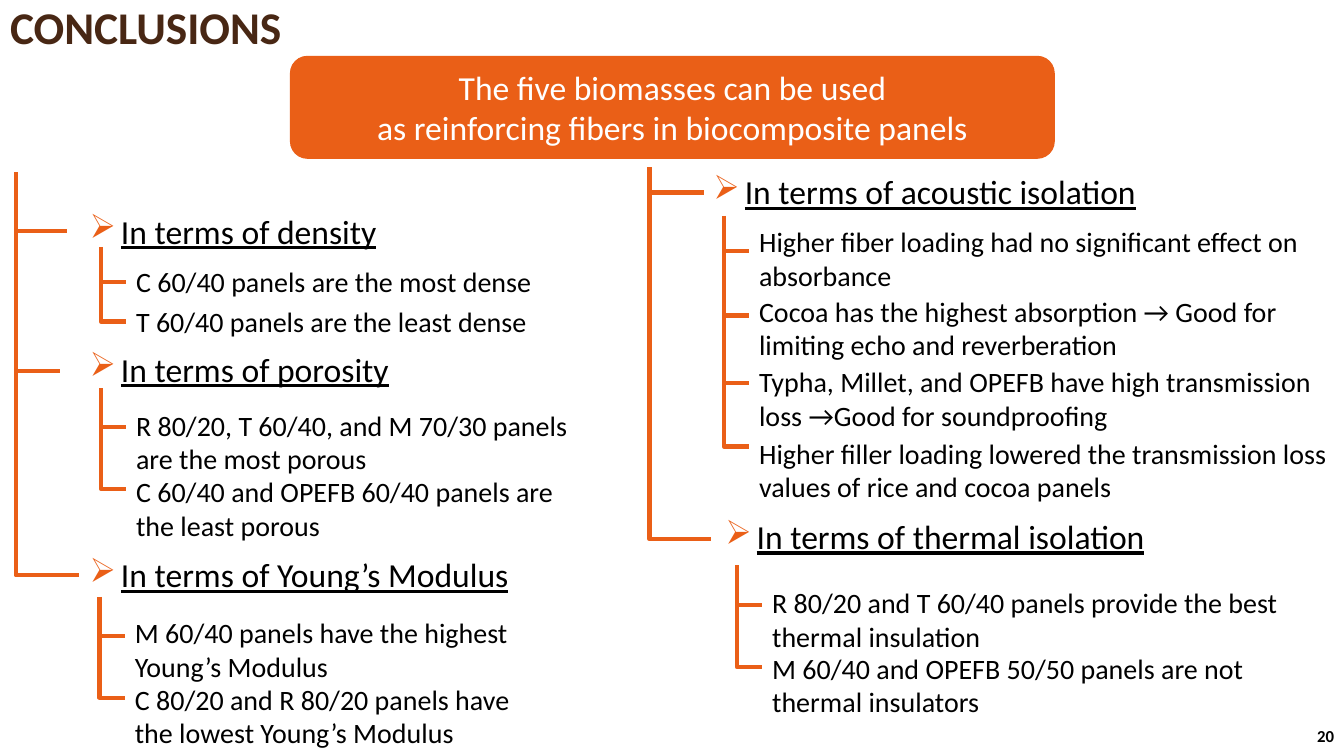
import pptx
import pptx.util
import pptx.dml.color
import pptx.enum.shapes
import pptx.enum.text
import pptx.oxml.ns
import lxml.etree

Cm, Pt = pptx.util.Cm, pptx.util.Pt
Align, Anchor = pptx.enum.text.PP_ALIGN, pptx.enum.text.MSO_ANCHOR
qn = pptx.oxml.ns.qn

ORANGE, BROWN, BLACK, WHITE = "EA5F17", "482714", "000000", "FFFFFF"
TITLE = "CONCLUSIONS"
CLAIM = ["The five biomasses can be used", "as reinforcing fibers in biocomposite panels"]
PAGE = "20"

TRUNKS = [
    dict(x=0.4, top=4.34, topics=[
        dict(name="In terms of density", box=(2.01, 5.18, 7.82), arm=(1.7, 5.82),
             stem=(2.54, 6.22), wide=11.53, facts=[
                 ("C 60/40 panels are the most dense", 6.55, 7.11),
                 ("T 60/40 panels are the least dense", 7.54, 8.1)]),
        dict(name="In terms of porosity", box=(2.01, 8.66, 8.13), arm=(1.52, 9.35),
             stem=(2.54, 9.78), wide=11.73, facts=[
                 ("R 80/20, T 60/40, and M 70/30 panels are the most porous", 10.16, 10.77),
                 ("C 60/40 and OPEFB 60/40 panels are the least porous", 11.84, 12.32)]),
        dict(name="In terms of Young’s Modulus", box=(2.01, 13.84, 11.18), arm=(1.98, 14.5),
             stem=(2.51, 15.04), wide=10.59, facts=[
                 ("M 60/40 panels have the highest Young’s Modulus", 15.39, 16.03),
                 ("C 80/20 and R 80/20 panels have the lowest Young’s Modulus", 17.07, 17.58)]),
    ]),
    dict(x=16.37, top=4.22, topics=[
        dict(name="In terms of acoustic isolation", box=(17.73, 4.19, 11.25), arm=(17.73, 4.85),
             stem=(18.24, 5.44), wide=14.99, facts=[
                 ("Higher fiber loading had no significant effect on absorbance", 5.54, 6.32),
                 ("Cocoa has the highest absorption → Good for limiting echo and reverberation", 7.29, 7.95),
                 ("Typha, Millet, and OPEFB have high transmission loss →Good for soundproofing", 9.07, 9.65),
                 ("Higher filler loading lowered the transmission loss values of rice and cocoa panels",
                  10.87, 11.25)]),
        dict(name="In terms of thermal isolation", box=(18.03, 12.88, 11.18), arm=(17.93, 13.59),
             stem=(18.57, 14.25), wide=13.6, facts=[
                 ("R 80/20 and T 60/40 panels provide the best thermal insulation", 14.63, 15.24),
                 ("M 60/40 and OPEFB 50/50 panels are not thermal insulators", 16.28, 16.81)]),
    ]),
]
REACH = 0.64


def tint(code):
    return pptx.dml.color.RGBColor.from_string(code)


def style(par, size, code, bold=False):
    font = par.font
    font.name, font.size, font.bold = "Calibri", Pt(size), bold
    font.color.rgb = tint(code)


def label(slide, text, x, y, w, h, size=20, wrap=True):
    frame = slide.shapes.add_textbox(Cm(x), Cm(y), Cm(w), Cm(h)).text_frame
    frame.word_wrap = wrap
    par = frame.paragraphs[0]
    par.text = text
    style(par, size, BLACK)
    return frame


def heading(slide, text, x, y, w):
    par = label(slide, text, x, y, w, 1.28, 24, False).paragraphs[0]
    props = par._p.get_or_add_pPr()
    props.set("marL", str(Cm(0.79)))
    props.set("indent", str(-Cm(0.79)))
    hue = lxml.etree.Element(qn("a:buClr"))
    lxml.etree.SubElement(hue, qn("a:srgbClr"), val=ORANGE)
    mark = lxml.etree.Element(qn("a:buChar"), char="➢")
    props.insert(0, hue)
    props.insert(1, mark)
    par.font.underline = True


def elbow(slide, x, y, right, low):
    drop, run = low - y, right - x
    left, top = (x + right - drop) / 2, (y + low - run) / 2
    kind = pptx.enum.shapes.MSO_CONNECTOR.ELBOW
    line = slide.shapes.add_connector(kind, Cm(left), Cm(top), Cm(left + drop), Cm(top + run))
    line.line.color.rgb = tint(ORANGE)
    line.line.width = Pt(3)
    props = line._element.spPr
    frame = props.find(qn("a:xfrm"))
    frame.set("rot", "16200000")
    frame.set("flipH", "1")
    props.find(qn("a:prstGeom")).set("prst", "bentConnector2")
    lxml.etree.SubElement(props, qn("a:effectLst"))


def banner(slide):
    kind = pptx.enum.shapes.MSO_SHAPE.ROUNDED_RECTANGLE
    box = slide.shapes.add_shape(kind, Cm(7.32), Cm(1.42), Cm(19.25), Cm(2.57))
    box.shadow.inherit = False
    box.fill.solid()
    box.fill.fore_color.rgb = tint(ORANGE)
    box.line.color.rgb = tint(ORANGE)
    box.line.width = Pt(0.75)
    frame = box.text_frame
    frame.vertical_anchor = Anchor.MIDDLE
    frame.text = "\n".join(CLAIM)
    for par in frame.paragraphs:
        par.alignment = Align.CENTER
        style(par, 24, WHITE)


def main():
    deck = pptx.Presentation()
    deck.slide_width, deck.slide_height = Cm(33.87), Cm(19.05)
    slide = deck.slides.add_slide(deck.slide_layouts[5])
    title = slide.shapes.title
    title.left, title.top, title.width, title.height = Cm(0), Cm(0), Cm(25.45), Cm(1.52)
    title.text_frame.text = TITLE
    title.text_frame.vertical_anchor = Anchor.MIDDLE
    par = title.text_frame.paragraphs[0]
    par.alignment, par.line_spacing = Align.LEFT, 0.9
    style(par, 32.4, BROWN, True)
    banner(slide)

    for trunk in TRUNKS:
        start = trunk["top"]
        for topic in trunk["topics"]:
            heading(slide, topic["name"], *topic["box"])
            elbow(slide, trunk["x"], start, *topic["arm"])
            start = topic["arm"][1]
            x, y = topic["stem"]
            for text, top, low in topic["facts"]:
                label(slide, text, x + REACH, top, topic["wide"], 1.96 if len(text) > 40 else 1.11)
                elbow(slide, x, y, x + REACH, low)
                y = low

    foot = label(slide, PAGE, 29.77, 18.03, 4.1, 1.02, 12)
    foot.vertical_anchor = Anchor.MIDDLE
    foot.paragraphs[0].alignment = Align.RIGHT
    foot.paragraphs[0].font.bold = True
    deck.save("out.pptx")


if __name__ == "__main__":
    main()
